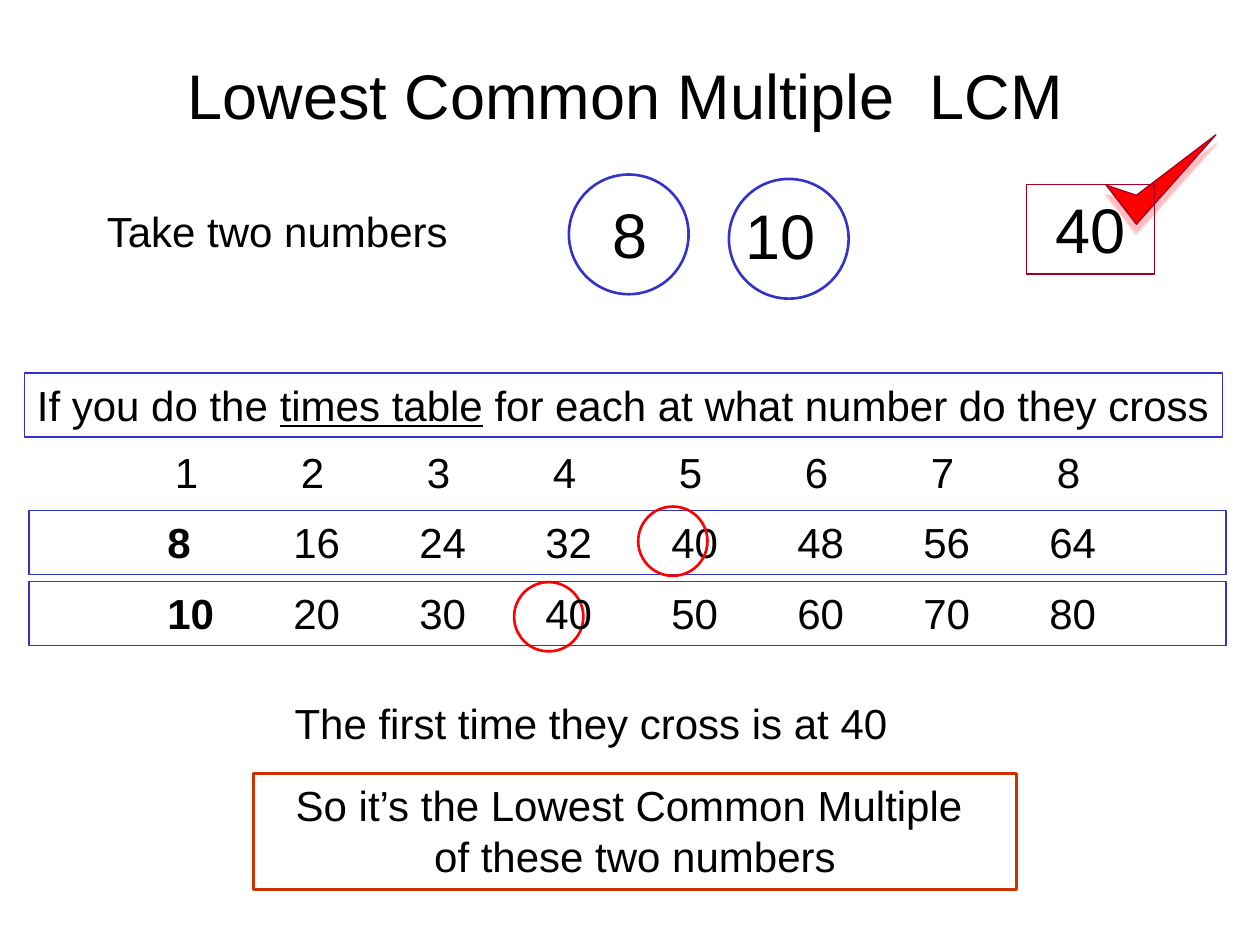
from lxml import etree
from pptx import Presentation
from pptx.dml.color import RGBColor
from pptx.enum.shapes import MSO_SHAPE
from pptx.enum.text import MSO_ANCHOR, PP_ALIGN
from pptx.oxml.ns import qn
from pptx.util import Inches, Pt

RECTANGLE, OVAL = MSO_SHAPE.RECTANGLE, MSO_SHAPE.OVAL
TOP, MIDDLE = MSO_ANCHOR.TOP, MSO_ANCHOR.MIDDLE
LEFT, CENTER = PP_ALIGN.LEFT, PP_ALIGN.CENTER
COLUMNS, ROWS = 100, 75


def color(code):
    return RGBColor.from_string(code)


def write(para, text, size=24, bold=False, underline=False, font="Arial", ink="000000"):
    span = para.add_run()
    span.text = text
    span.font.size = Pt(size)
    span.font.name = font
    span.font.bold = bold
    span.font.underline = underline
    span.font.color.rgb = color(ink)


class Page:
    blue, red, crimson, orange, pink = "3333CC", "FF0000", "A50021", "CC3300", "FF7C80"
    tab_width = Inches(1)

    def __init__(self, deck):
        self.slide = deck.slides.add_slide(deck.slide_layouts[5])
        self.shapes = self.slide.shapes
        self.column = deck.slide_width / COLUMNS
        self.row = deck.slide_height / ROWS

    def place(self, left, top, width, height):
        return [int(left * self.column), int(top * self.row),
                int(width * self.column), int(height * self.row)]

    def fill_text(self, box, lines, size=24, align=LEFT, wrap=True, anchor=TOP):
        frame = box.text_frame
        frame.word_wrap = wrap
        frame.vertical_anchor = anchor
        for index, line in enumerate(lines):
            para = frame.add_paragraph() if index else frame.paragraphs[0]
            para.alignment = align
            para._p.get_or_add_pPr().set("defTabSz", str(self.tab_width))
            for text, style in line:
                write(para, text, size=size, **style)

    def title(self, text, at):
        box = self.slide.shapes.title
        box.left, box.top, box.width, box.height = self.place(*at)
        self.fill_text(box, [[(text, {})]], size=36, align=CENTER, anchor=MIDDLE)

    def text(self, text, at, target=None, **style):
        box = (target or self.shapes).add_textbox(*self.place(*at))
        self.fill_text(box, [[(text, {})]], **style)

    def outline(self, kind, at, line, weight=0.75, lines=(), target=None, **style):
        box = (target or self.shapes).add_shape(kind, *self.place(*at))
        box.shadow.inherit = False
        box.fill.background()
        box.line.color.rgb = color(line)
        box.line.width = Pt(weight)
        self.fill_text(box, lines, **style)

    def group(self):
        return self.shapes.add_group_shape().shapes

    def number(self, text, text_at, circle_at):
        target = self.group()
        self.text(text, text_at, target, size=36, wrap=False)
        self.outline(OVAL, circle_at, self.blue, 1.5, target=target)

    def multiples(self, base, top):
        rest = "".join(f"\t{base * step}" for step in range(2, 9))
        line = [("\t", {}), (str(base), {"bold": True}), (rest, {})]
        self.outline(RECTANGLE, (2.3, top, 95, 5.1), self.blue, lines=[line])

    def tick(self, points, target):
        places = [(x * self.column, y * self.row) for x, y in points]
        builder = target.build_freeform(*places[0])
        builder.add_line_segments(places[1:], close=True)
        mark = builder.convert_to_shape()
        mark.fill.solid()
        mark.fill.fore_color.rgb = color(self.red)
        mark.line.color.rgb = color(self.crimson)
        mark.line.width = Pt(0.75)
        mark.shadow.inherit = False
        effects = mark.element.spPr.find(qn("a:effectLst"))
        shadow = etree.SubElement(effects, qn("a:outerShdw"), blurRad=str(Pt(1)),
                                  dist=str(Pt(5)), dir="5400000", rotWithShape="0")
        tint = etree.SubElement(shadow, qn("a:srgbClr"), val=self.pink)
        etree.SubElement(tint, qn("a:alpha"), val="50000")


def main():
    deck = Presentation()
    deck.slide_width, deck.slide_height = Inches(10), Inches(7.5)
    page = Page(deck)

    page.title("Lowest Common Multiple  LCM", (3.5, 1.25, 92.3, 12.5))
    page.text("Take two numbers", (7.5, 15.8, 29.4, 5), wrap=False)
    question = [("If you do the ", {}), ("times table", {"underline": True}),
                (" for each at what number do they cross", {})]
    page.outline(RECTANGLE, (1.95, 29.6, 95.1, 5.1), page.blue, lines=[question], wrap=False)
    page.multiples(8, 40.5)
    page.number("8", (47.6, 15, 4.8, 7), (45.15, 13.85, 9.5, 9.5))
    page.number("10", (58.2, 15.1, 7.6, 7), (57.85, 14.2, 9.5, 9.5))

    page.text("The first time they cross is at 40", (22.4, 54.85, 54.3, 5))
    conclusion = [[("So it’s the Lowest Common Multiple ", {})],
                  [("of these two numbers", {})]]
    page.outline(RECTANGLE, (20.1, 61.4, 60.6, 9.2), page.orange, 1.5,
                 conclusion, align=CENTER)

    answer = page.group()
    page.outline(RECTANGLE, (81.45, 14.65, 10.2, 7.1), page.crimson,
                 lines=[[("40", {})]], target=answer, size=36, align=CENTER)
    page.tick([(87.8, 14.7), (90.2, 17.8), (96.5, 10.7), (90.2, 15.5)], answer)

    steps = "".join(f"\t{step}" for step in range(1, 9))
    page.text(steps, (2.9, 34.95, 93.5, 5))
    crossings = page.group()
    for left, top in ((40.8, 46.2), (50.65, 40.2)):
        page.outline(OVAL, (left, top, 5.5, 5.5), page.red, 1.5, target=crossings)
    page.multiples(10, 46.15)

    deck.save("out.pptx")


if __name__ == "__main__":
    main()
